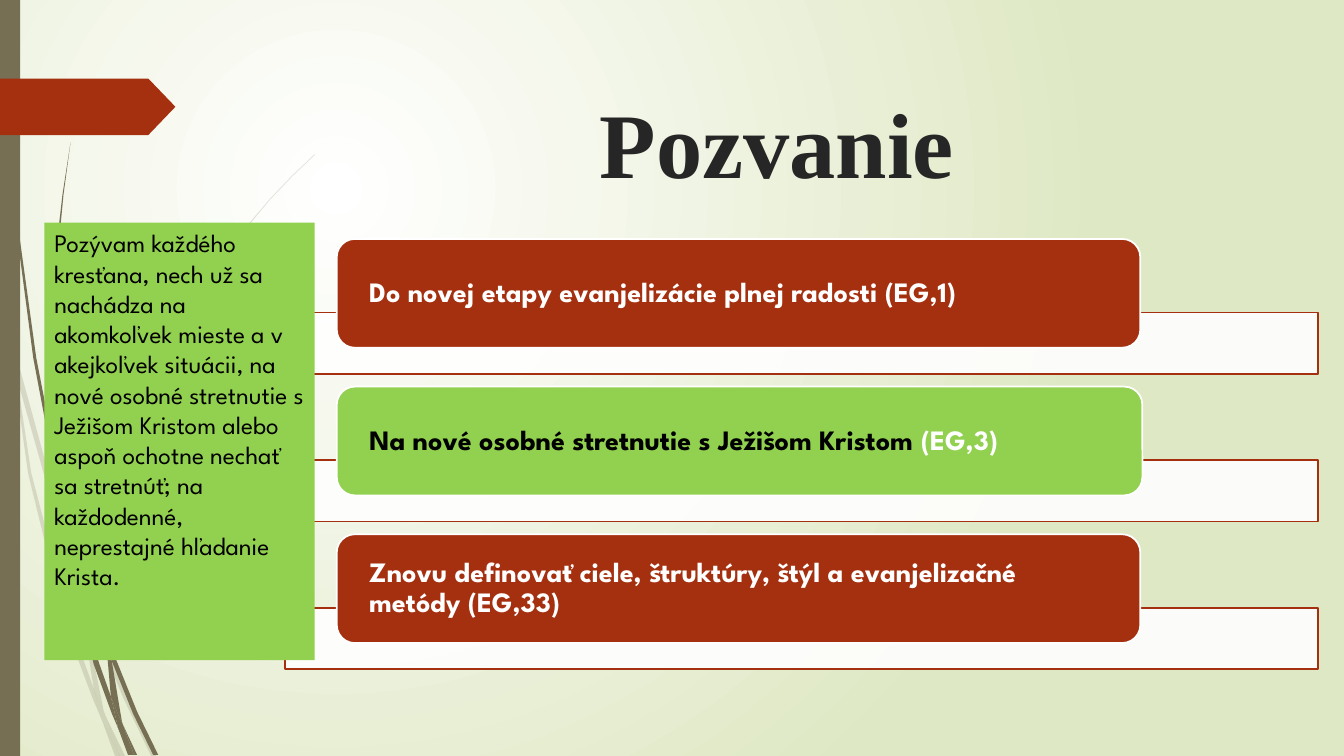
from lxml import etree
from pptx import Presentation
from pptx.dml.color import RGBColor
from pptx.enum.shapes import MSO_SHAPE
from pptx.enum.text import MSO_ANCHOR, PP_ALIGN
from pptx.oxml.ns import qn
from pptx.util import Inches, Pt

RECT = MSO_SHAPE.RECTANGLE
ROUND = MSO_SHAPE.ROUNDED_RECTANGLE
ARROW = MSO_SHAPE.PENTAGON
LEFT, CENTER = PP_ALIGN.LEFT, PP_ALIGN.CENTER
TOP, MIDDLE = MSO_ANCHOR.TOP, MSO_ANCHOR.MIDDLE

HUES = {"red": "A53010", "green": "92D050", "olive": "766F54", "white": "FFFFFF",
        "black": "000000", "dark": "262626", "pale": "DFE8C4"}
FONT, SERIF = "League Spartan", "Times New Roman"

TITLE = "Pozvanie"
CALL = ("Pozývam každého kresťana, nech už sa nachádza na akomkoľvek mieste a v "
        "akejkoľvek situácii, na nové osobné stretnutie s Ježišom Kristom alebo "
        "aspoň ochotne nechať sa stretnúť; na každodenné, neprestajné hľadanie Krista.")
GOALS = [
    ("red", 7.97, [("Do novej etapy evanjelizácie plnej radosti (EG,1)", "white")]),
    ("green", 7.99, [("Na nové osobné stretnutie s Ježišom Kristom", "black"),
                     (" (EG,3)", "white")]),
    ("red", 7.97, [("Znovu definovať ciele, štruktúry, štýl a evanjelizačné "
                    "metódy (EG,33)", "white")]),
]

FAINT = [
    [(0.11, 3.5), (0.09, 3.22), (0, 2.82), (0, 2.99), (0.1, 3.44)],
    [(0.58, 5.22), (0.84, 5.99), (0.85, 5.86), (0.62, 5.2), (0.14, 3.45), (0.17, 3.76)],
    [(0.92, 6.07), (0.88, 5.96), (0.88, 6.1), (1.23, 6.94), (1.5, 7.5), (1.55, 7.5),
     (1.27, 6.92)],
    [(1.19, 7.5), (1.24, 7.5), (1.05, 7.11)],
    [(0.93, 6.83), (0.7, 6.19), (0.31, 4.69), (0.17, 3.76), (0.11, 3.5), (0.28, 4.7),
     (0.65, 6.21), (0.92, 6.93), (1.01, 7.14), (0.99, 7.07)],
    [(0.84, 5.99), (0.87, 6.46), (0.93, 6.83), (0.96, 6.92), (1.05, 7.11), (1.03, 7.06),
     (0.91, 6.46), (0.88, 6.1), (0.88, 6.08)],
    [(0.88, 5.84), (1.1, 4.62), (1.6, 3.49), (2.29, 2.45), (2.68, 1.98), (2.9, 1.75),
     (3.12, 1.54), (3.12, 1.53), (2.89, 1.75), (2.68, 1.97), (2.28, 2.44), (1.58, 3.48),
     (1.07, 4.61), (0.85, 5.84), (0.85, 5.86), (0.88, 5.96)],
    [(1.01, 7.14), (1.14, 7.5), (1.19, 7.5)],
    [(0.96, 6.92), (0.93, 6.83), (0.99, 7.07), (1.01, 7.14), (1.19, 7.5), (1.05, 7.11)],
]
SOLID = [
    [(0.07, 1.1), (0.17, 2.33), (0.33, 3.55), (0.56, 4.77), (0.57, 4.81), (0.55, 4.57),
     (0.55, 4.53), (0.36, 3.55), (0.19, 2.32), (0.08, 1.09), (0.05, 0.48), (0.04, 0),
     (0.03, 0), (0.04, 0.48)],
    [(1.13, 6.49), (1.1, 6.41), (1.11, 6.56), (1.32, 7.08), (1.52, 7.49), (1.57, 7.49),
     (1.36, 7.06)],
    [(1.1, 6.91), (0.98, 6.57), (0.72, 5.56), (0.64, 5.05), (0.57, 4.77), (0.68, 5.57),
     (0.93, 6.59), (1.11, 7.08), (1.17, 7.22), (1.16, 7.17)],
    [(0.6, 4.72), (0.58, 4.53), (0.54, 3.49), (0.58, 2.45), (0.63, 1.93), (0.7, 1.41),
     (0.62, 1.93), (0.56, 2.45), (0.52, 3.49), (0.55, 4.49)],
    [(1.33, 7.49), (1.36, 7.49), (1.22, 7.19)],
    [(1.17, 7.22), (1.27, 7.49), (1.31, 7.49)],
    [(1.06, 6.45), (1.1, 6.91), (1.16, 7.06), (1.22, 7.19), (1.21, 7.16), (1.11, 6.56),
     (1.09, 6.51)],
    [(1.06, 6.45), (1.09, 6.51), (1.11, 6.56), (1.1, 6.41), (1.06, 6.31)],
    [(1.16, 7.06), (1.1, 6.91), (1.16, 7.17), (1.17, 7.22), (1.3, 7.49), (1.33, 7.49),
     (1.22, 7.19)],
]


def rgb(hue):
    return RGBColor.from_string(HUES[hue])


def paint(shape, hue, edge=None, alpha=100):
    shape.shadow.inherit = False
    shape.fill.solid()
    shape.fill.fore_color.rgb = rgb(hue)
    if alpha < 100:
        clr = shape._element.xpath("p:spPr/a:solidFill/a:srgbClr")[0]
        etree.SubElement(clr, qn("a:alpha"), val=str(alpha * 1000))
    if edge:
        shape.line.color.rgb = rgb(edge)
        shape.line.width = Pt(1.25)
    else:
        shape.line.fill.background()
    return shape


def block(kind, box, hue, edge=None, alpha=100):
    shape = slide.shapes.add_shape(kind, *map(Inches, box))
    return paint(shape, hue, edge, alpha)


def blade(dots, alpha):
    first, *rest = [(Inches(x), Inches(y)) for x, y in dots]
    pen = slide.shapes.build_freeform(*first, scale=1.0)
    pen.add_line_segments(rest, close=True)
    paint(pen.convert_to_shape(), "olive", alpha=alpha)


def write(shape, parts, size, font, bold, align, anchor):
    frame = shape.text_frame
    frame.word_wrap = True
    frame.vertical_anchor = anchor
    para = frame.paragraphs[0]
    para.alignment = align
    for text, hue in parts:
        run = para.add_run()
        run.text = text
        run.font.size = Pt(size)
        run.font.name = font
        run.font.bold = bold
        run.font.color.rgb = rgb(hue)
    return frame


deck = Presentation()
deck.slide_width, deck.slide_height = Inches(13.33), Inches(7.5)
slide = deck.slides.add_slide(deck.slide_layouts[5])

back = slide.background.fill
back.gradient()
for stop, hue, place in zip(back.gradient_stops, ("white", "pale"), (0, 1)):
    stop.color.rgb = rgb(hue)
    stop.position = place
lin = slide._element.xpath(".//p:bgPr/a:gradFill/a:lin")[0]
glow = etree.Element(qn("a:path"), path="circle")
etree.SubElement(glow, qn("a:fillToRect"), l="50000", t="50000", r="100000", b="100000")
lin.getparent().replace(lin, glow)

for blades, alpha in ((FAINT, 20), (SOLID, 100)):
    for dots in blades:
        blade(dots, alpha)
block(RECT, (0, 0, 0.2, 7.5), "olive")
flag = block(ARROW, (0, 0.78, 1.74, 0.56), "red")
flag.adjustments[0] = 0.48

title = slide.shapes.title
title.left, title.top, title.width, title.height = map(Inches, (2.83, 0.7, 9.75, 1.4))
write(title, [(TITLE, "dark")], 66, SERIF, True, CENTER, MIDDLE)

ROW, STEP = 2.37, 1.465
for i, (hue, wide, parts) in enumerate(GOALS):
    top = ROW + i * STEP
    block(RECT, (2.83, top + 0.73, 10.24, 0.61), "white", "red", 90)
    pill = block(ROUND, (3.34, top, wide, 1.08), hue, "white")
    frame = write(pill, parts, 20, FONT, True, LEFT, MIDDLE)
    frame.margin_left = frame.margin_right = Inches(0.27)
    frame.margin_top = frame.margin_bottom = 0
    frame.paragraphs[0].line_spacing = 0.9

note = block(RECT, (0.44, 2.21, 2.68, 4.34), "green")
write(note, [(CALL, "black")], 18, FONT, False, LEFT, TOP)

deck.save("out.pptx")
